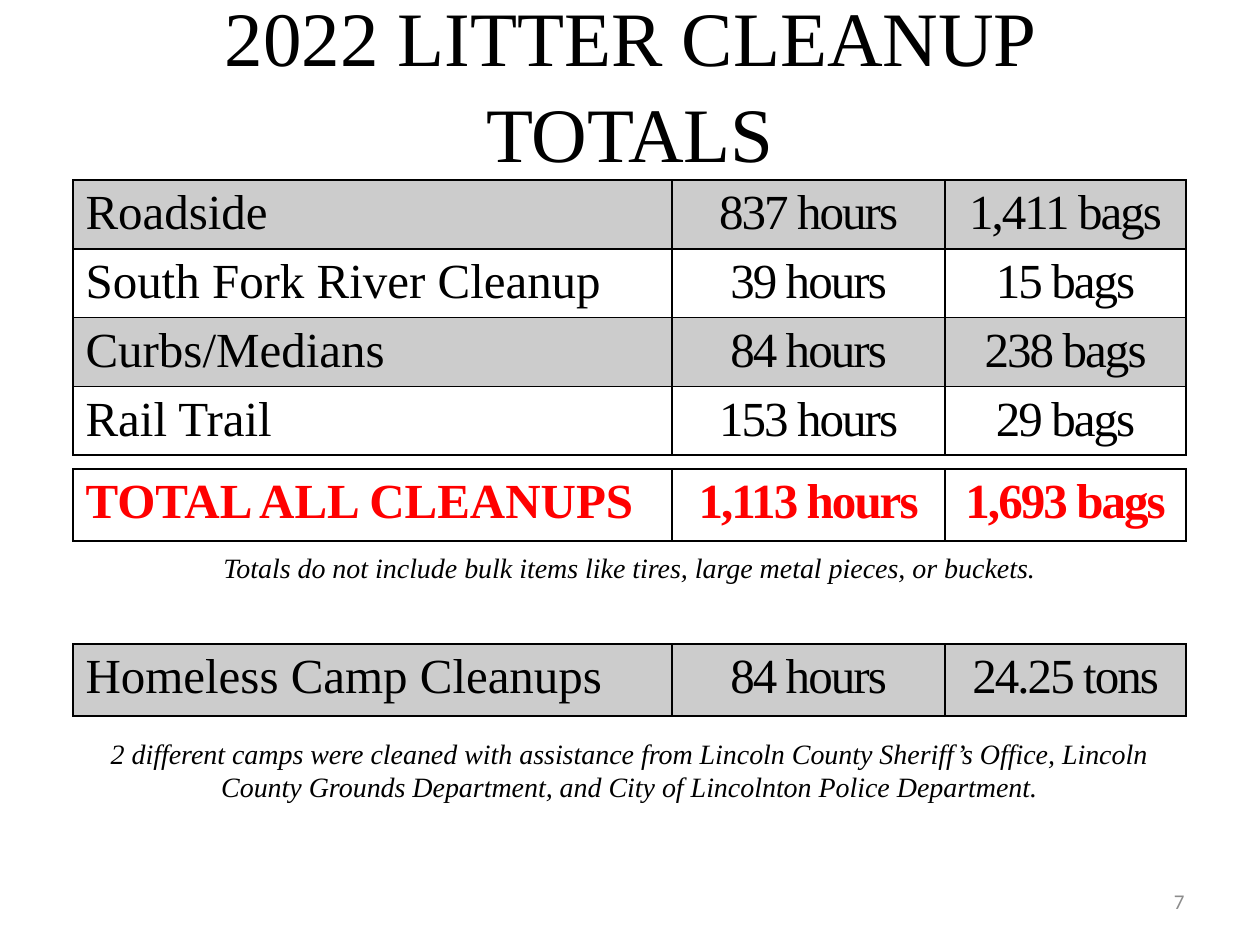
from pptx import Presentation
from pptx.dml.color import RGBColor
from pptx.enum.text import MSO_ANCHOR, PP_ALIGN
from pptx.oxml import parse_xml
from pptx.oxml.ns import nsdecls
from pptx.util import Pt

LEFT, MID, RIGHT = PP_ALIGN.LEFT, PP_ALIGN.CENTER, PP_ALIGN.RIGHT
TOP, CENTER = MSO_ANCHOR.TOP, MSO_ANCHOR.MIDDLE
SCALE = 914400 / 126
X, COLS = 73, (599, 273, 241)
WIDTH = sum(COLS)


def px(n):
    return round(n * SCALE)


def color(code):
    return RGBColor.from_string(code)


def write(frame, text, size=28, font="Times New Roman", ink="000000",
          bold=False, italic=False, align=MID, tight=0, lead=None):
    para = frame.paragraphs[0]
    para.alignment = align
    if lead:
        para.line_spacing = lead
    run = para.add_run()
    run.text = text
    face = run.font
    face.size, face.name = Pt(size), font
    face.bold, face.italic = bold, italic
    face.color.rgb = color(ink)
    if tight:
        run._r.get_or_add_rPr().set("spc", str(tight))


class Deck:
    """Holds the style and the current slide, with a method per element."""

    line = "000000"
    shade = "000000"
    alpha = 20

    def __init__(self):
        self.prs = Presentation()
        self.prs.slide_width, self.prs.slide_height = px(1260), px(945)
        self.slide = self.prs.slides.add_slide(self.prs.slide_layouts[6])

    def text(self, x, y, w, h, text, anchor=TOP, **form):
        box = self.slide.shapes.add_textbox(px(x), px(y), px(w), px(h))
        frame = box.text_frame
        frame.word_wrap = True
        frame.vertical_anchor = anchor
        write(frame, text, **form)

    def note(self, y, h, text):
        self.text(X, y, WIDTH, h, text, size=16, italic=True)

    def edge(self, cell):
        props = cell._tc.get_or_add_tcPr()
        for i, side in enumerate(("lnL", "lnR", "lnT", "lnB")):
            props.insert(i, parse_xml(
                f'<a:{side} {nsdecls("a")} w="12700"><a:solidFill>'
                f'<a:srgbClr val="{self.line}"/></a:solidFill></a:{side}>'))

    def tint(self, cell, dark):
        if not dark:
            cell.fill.background()
            return
        cell.fill.solid()
        cell.fill.fore_color.rgb = color(self.shade)
        tone = cell._tc.tcPr.find(".//{*}srgbClr")
        tone.append(parse_xml(
            f'<a:alpha {nsdecls("a")} val="{self.alpha * 1000}"/>'))

    def table(self, y, high, rows, dark=True, **form):
        shape = self.slide.shapes.add_table(
            len(rows), len(COLS), px(X), px(y), px(WIDTH), px(high * len(rows)))
        table = shape.table
        table.first_row = table.horz_banding = False
        for col, wide in zip(table.columns, COLS):
            col.width = px(wide)
        for r, row in enumerate(rows):
            table.rows[r].height = px(high)
            for c, text in enumerate(row):
                cell = table.cell(r, c)
                cell.margin_top, cell.margin_bottom = px(6), px(4)
                self.tint(cell, dark and r % 2 == 0)
                self.edge(cell)
                write(cell.text_frame, text, align=MID if c else LEFT,
                      tight=-110 if c else 0, **form)


def main():
    deck = Deck()
    deck.text(63, 38, 1134, 88, "2022 LITTER CLEANUP TOTALS",
              anchor=CENTER, size=44, lead=1.04)
    deck.table(180, 67, [
        ("Roadside", "837 hours", "1,411 bags"),
        ("South Fork River Cleanup", "39 hours", "15 bags"),
        ("Curbs/Medians", "84 hours", "238 bags"),
        ("Rail Trail", "153 hours", "29 bags"),
    ])
    deck.table(469, 72, [("TOTAL ALL CLEANUPS", "1,113 hours", "1,693 bags")],
               dark=False, ink="FF0000", bold=True)
    deck.note(544, 47, "Totals do not include bulk items like tires, "
              "large metal pieces, or buckets.")
    deck.table(644, 72, [("Homeless Camp Cleanups", "84 hours", "24.25 tons")])
    deck.note(730, 81, "2 different camps were cleaned with assistance from "
              "Lincoln County Sheriff’s Office, Lincoln County Grounds "
              "Department, and City of Lincolnton Police Department.")
    deck.text(903, 876, 294, 50, "7", anchor=CENTER, size=12, font="Calibri",
              ink="8C8C8C", align=RIGHT)
    deck.prs.save("out.pptx")


if __name__ == "__main__":
    main()
